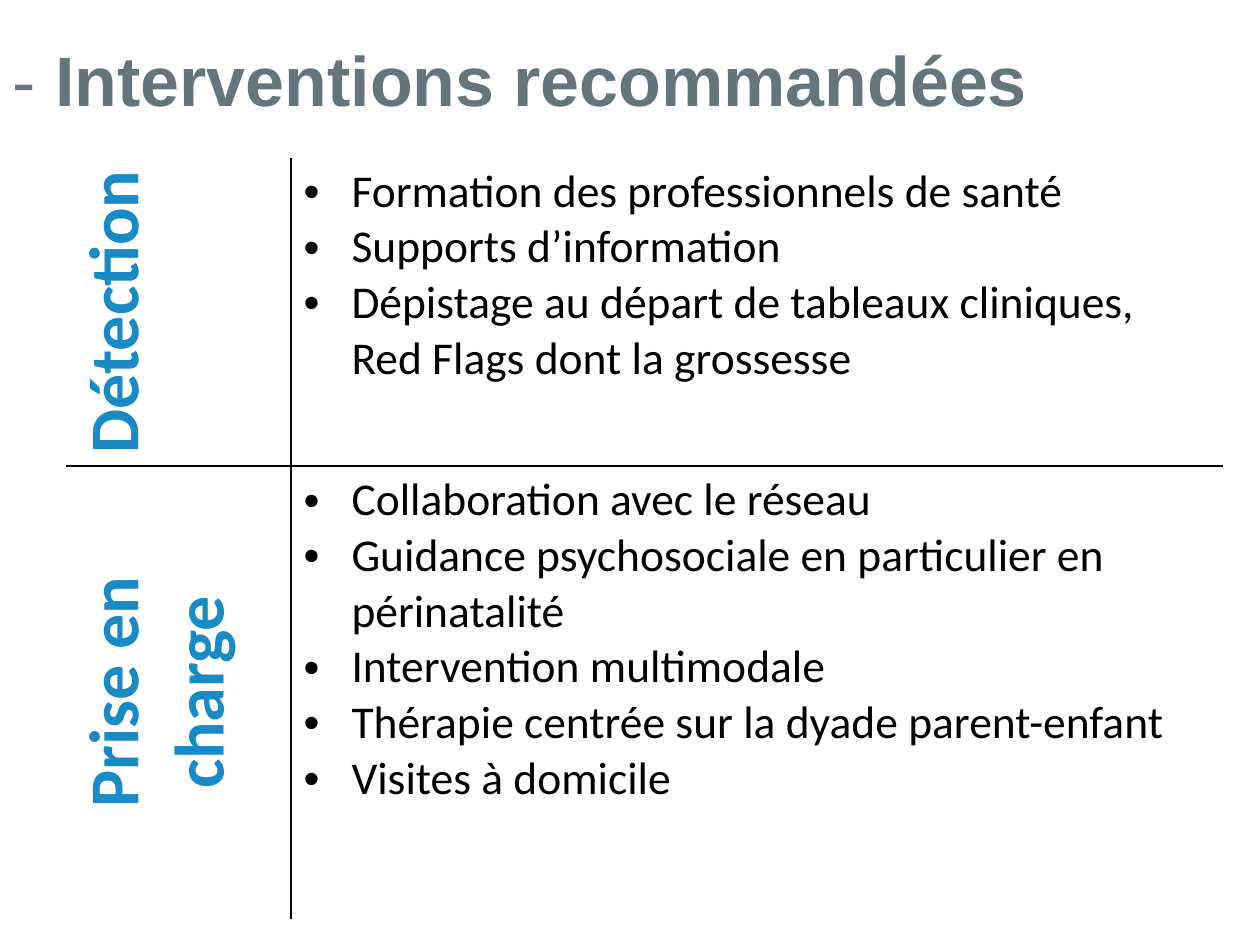
from pptx import Presentation
from pptx.dml.color import RGBColor
from pptx.enum.text import MSO_ANCHOR, MSO_AUTO_SIZE, PP_ALIGN
from pptx.oxml import parse_xml
from pptx.oxml.ns import nsdecls
from pptx.util import Inches, Pt

GREY = RGBColor(0x66, 0x74, 0x7B)
BLUE = RGBColor(0x19, 0x8A, 0xC6)
BLACK = RGBColor(0, 0, 0)

# Content
TITLE = [("- ", False), ("Interventions recommandées", True)]
ROWS = [
    ("Détection", [
        "Formation des professionnels de santé",
        "Supports d’information",
        "Dépistage au départ de tableaux cliniques, Red Flags dont la grossesse",
    ]),
    ("Prise en charge", [
        "Collaboration avec le réseau",
        "Guidance psychosociale en particulier en périnatalité",
        "Intervention multimodale",
        "Thérapie centrée sur la dyade parent-enfant",
        "Visites à domicile",
    ]),
]
COL_WIDTHS = [1.79, 7.4]
ROW_HEIGHTS = [2.45, 3.2]
LABEL_ANCHORS = [MSO_ANCHOR.MIDDLE, MSO_ANCHOR.TOP]


def add_run(p, text, font, size, color, bold=False):
    r = p.add_run()
    r.text = text
    r.font.name = font
    r.font.size = Pt(size)
    r.font.bold = bold
    r.font.color.rgb = color


def add_bullet(p):
    pPr = p._p.get_or_add_pPr()
    pPr.set("marL", str(Inches(0.38)))
    pPr.set("indent", str(-Inches(0.38)))
    pPr.append(parse_xml(f'<a:buFont {nsdecls("a")} typeface="Arial"/>'))
    pPr.append(parse_xml(f'<a:buChar {nsdecls("a")} char="•"/>'))


def set_borders(cell, sides):
    """Draw a black line on the given sides and none on the others."""
    tcPr = cell._tc.get_or_add_tcPr()
    solid = f'<a:solidFill><a:srgbClr val="{BLACK}"/></a:solidFill>'
    for i, side in enumerate("LRTB"):
        fill = solid if side in sides else "<a:noFill/>"
        tcPr.insert(i, parse_xml(
            f'<a:ln{side} {nsdecls("a")} w="{Pt(1)}">{fill}</a:ln{side}>'))


prs = Presentation()
prs.slide_width, prs.slide_height = Inches(10), Inches(7.5)
s = prs.slides.add_slide(prs.slide_layouts[5])

# Title
title = s.shapes.title
title.left, title.top = Inches(0), Inches(0)
title.width, title.height = Inches(11.04), Inches(1.25)
tf = title.text_frame
tf.auto_size = MSO_AUTO_SIZE.NONE
tf.vertical_anchor = MSO_ANCHOR.MIDDLE
p = tf.paragraphs[0]
p.alignment = PP_ALIGN.LEFT
for text, bold in TITLE:
    add_run(p, text, "Arial", 40, GREY, bold)

# Table, with lines only between its cells
table = s.shapes.add_table(
    len(ROWS), len(COL_WIDTHS), Inches(0.52), Inches(1.25),
    Inches(sum(COL_WIDTHS)), Inches(sum(ROW_HEIGHTS))).table
table.first_row = table.horz_banding = False
for col, width in zip(table.columns, COL_WIDTHS):
    col.width = Inches(width)

for i, (label, items) in enumerate(ROWS):
    table.rows[i].height = Inches(ROW_HEIGHTS[i])
    label_cell, list_cell = table.cell(i, 0), table.cell(i, 1)
    inner_side = "B" if i == 0 else "T"
    for cell, side in ((label_cell, "R"), (list_cell, "L")):
        cell.fill.background()
        set_borders(cell, side + inner_side)

    # Rotated label
    label_cell._tc.get_or_add_tcPr().set("vert", "vert270")
    label_cell.vertical_anchor = LABEL_ANCHORS[i]
    p = label_cell.text_frame.paragraphs[0]
    p.alignment = PP_ALIGN.CENTER
    add_run(p, label, "Calibri", 40, BLUE, True)

    # Bulleted list
    tf = list_cell.text_frame
    for j, item in enumerate(items):
        p = tf.add_paragraph() if j else tf.paragraphs[0]
        add_bullet(p)
        add_run(p, item, "Calibri", 26, BLACK)

prs.save("out.pptx")
